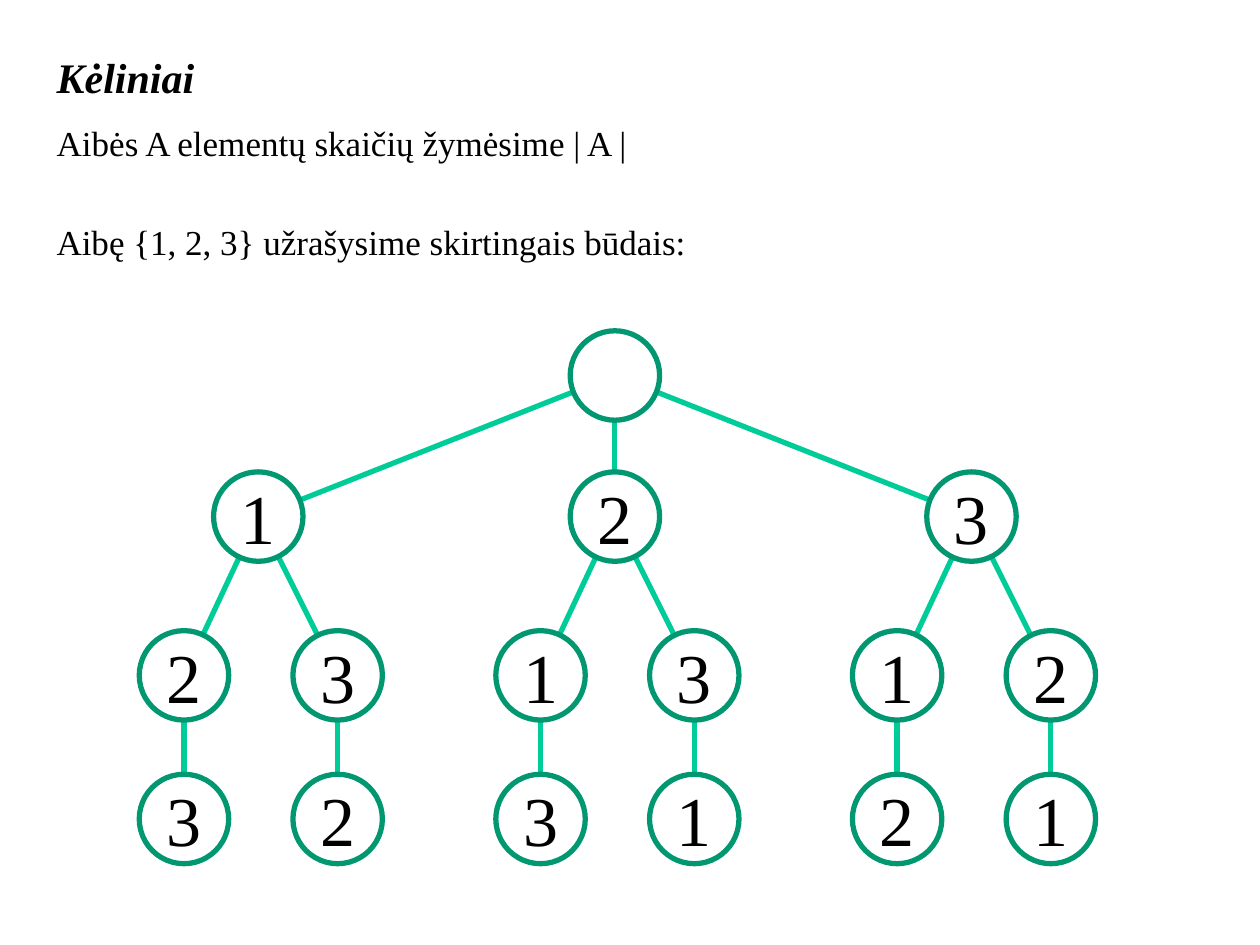
from dataclasses import dataclass

from lxml import etree
from pptx import Presentation
from pptx import util as u
from pptx.dml.color import RGBColor
from pptx.enum import shapes, text
from pptx.oxml.ns import qn


@dataclass(frozen=True)
class Theme:
    font: str = "Times New Roman"
    ink: RGBColor = RGBColor(0x00, 0x00, 0x00)
    paper: RGBColor = RGBColor(0xFF, 0xFF, 0xFF)
    ring: RGBColor = RGBColor(0x00, 0x97, 0x71)
    branch: RGBColor = RGBColor(0x00, 0xCC, 0x99)
    heading: int = 24
    body: int = 20
    digit: int = 40
    stroke: int = 3


THEME = Theme()
LEFT = 0.35

# Tree grid, in inches: three main columns, four levels
ITEMS = (1, 2, 3)
MIDDLE, COLUMN = 4.88, 2.83
LEVELS = (2.98, 4.1, 5.36, 6.5)
FORK = (-0.59, 0.63)
DIAMETER = 0.71


def style(p, size, bold=False, italic=False):
    f = p.font
    f.name, f.size, f.bold, f.italic = THEME.font, u.Pt(size), bold, italic
    f.color.rgb = THEME.ink


def write(sp, lines):
    """Fill a text shape with (words, size, emphasised, space before) lines."""
    tf = sp.text_frame
    tf.word_wrap = True
    tf.auto_size = text.MSO_AUTO_SIZE.NONE
    tf.vertical_anchor = text.MSO_ANCHOR.TOP
    for i, (words, size, strong, before) in enumerate(lines):
        p = tf.add_paragraph() if i else tf.paragraphs[0]
        p.text = words
        p.alignment = text.PP_ALIGN.LEFT
        p.space_before = u.Pt(before)
        style(p, size, strong, strong)


def add_branch(s, start, end):
    ends = [u.Inches(v) for v in (*start, *end)]
    c = s.shapes.add_connector(shapes.MSO_CONNECTOR.STRAIGHT, *ends)
    c.line.color.rgb = THEME.branch
    c.line.width = u.Pt(THEME.stroke)
    etree.SubElement(c._element.spPr, qn("a:effectLst"))


def add_node(s, centre, label):
    x, y = (u.Inches(v - DIAMETER / 2) for v in centre)
    d = u.Inches(DIAMETER)
    sp = s.shapes.add_shape(shapes.MSO_SHAPE.OVAL, x, y, d, d)
    sp.shadow.inherit = False
    sp.fill.solid()
    sp.fill.fore_color.rgb = THEME.paper
    sp.line.color.rgb = THEME.ring
    sp.line.width = u.Pt(THEME.stroke)
    if label:
        tf = sp.text_frame
        tf.word_wrap = False
        tf.vertical_anchor = text.MSO_ANCHOR.MIDDLE
        p = tf.paragraphs[0]
        p.text = label
        p.alignment = text.PP_ALIGN.CENTER
        style(p, THEME.digit)


def permutation_tree():
    """Return nodes as (centre, label) and branches as (start, end)."""
    root = (MIDDLE, LEVELS[0])
    nodes, branches = [(root, "")], []

    def grow(parent, x, level, item):
        centre = (x, LEVELS[level])
        nodes.append((centre, str(item)))
        branches.append((parent, centre))
        return centre

    for i, first in enumerate(ITEMS):
        x = MIDDLE + (i - 1) * COLUMN
        top = grow(root, x, 1, first)
        rest = [n for n in ITEMS if n != first]
        for shift, second, third in zip(FORK, rest, reversed(rest)):
            mid = grow(top, x + shift, 2, second)
            grow(mid, x + shift, 3, third)
    return nodes, branches


def main():
    prs = Presentation()
    prs.slide_width, prs.slide_height = u.Inches(10), u.Inches(7.5)
    s = prs.slides.add_slide(prs.slide_layouts[5])

    # Heading with its definition
    title = s.shapes.title
    title.left, title.top = u.Inches(LEFT), u.Inches(0.36)
    title.width, title.height = u.Inches(7.01), u.Inches(1.01)
    write(title, [
        ("Kėliniai", THEME.heading, True, 3),
        ("Aibės A elementų skaičių žymėsime | A |", THEME.body, False, 11),
    ])

    # Lead-in to the tree
    lead = s.shapes.add_textbox(u.Inches(LEFT), u.Inches(1.7),
                                u.Inches(8.82), u.Inches(0.44))
    write(lead, [("Aibę {1, 2, 3} užrašysime skirtingais būdais:",
                  THEME.body, False, 3)])

    # Tree: branches lie behind the nodes
    nodes, branches = permutation_tree()
    for start, end in branches:
        add_branch(s, start, end)
    for centre, label in nodes:
        add_node(s, centre, label)

    prs.save("out.pptx")


if __name__ == "__main__":
    main()
